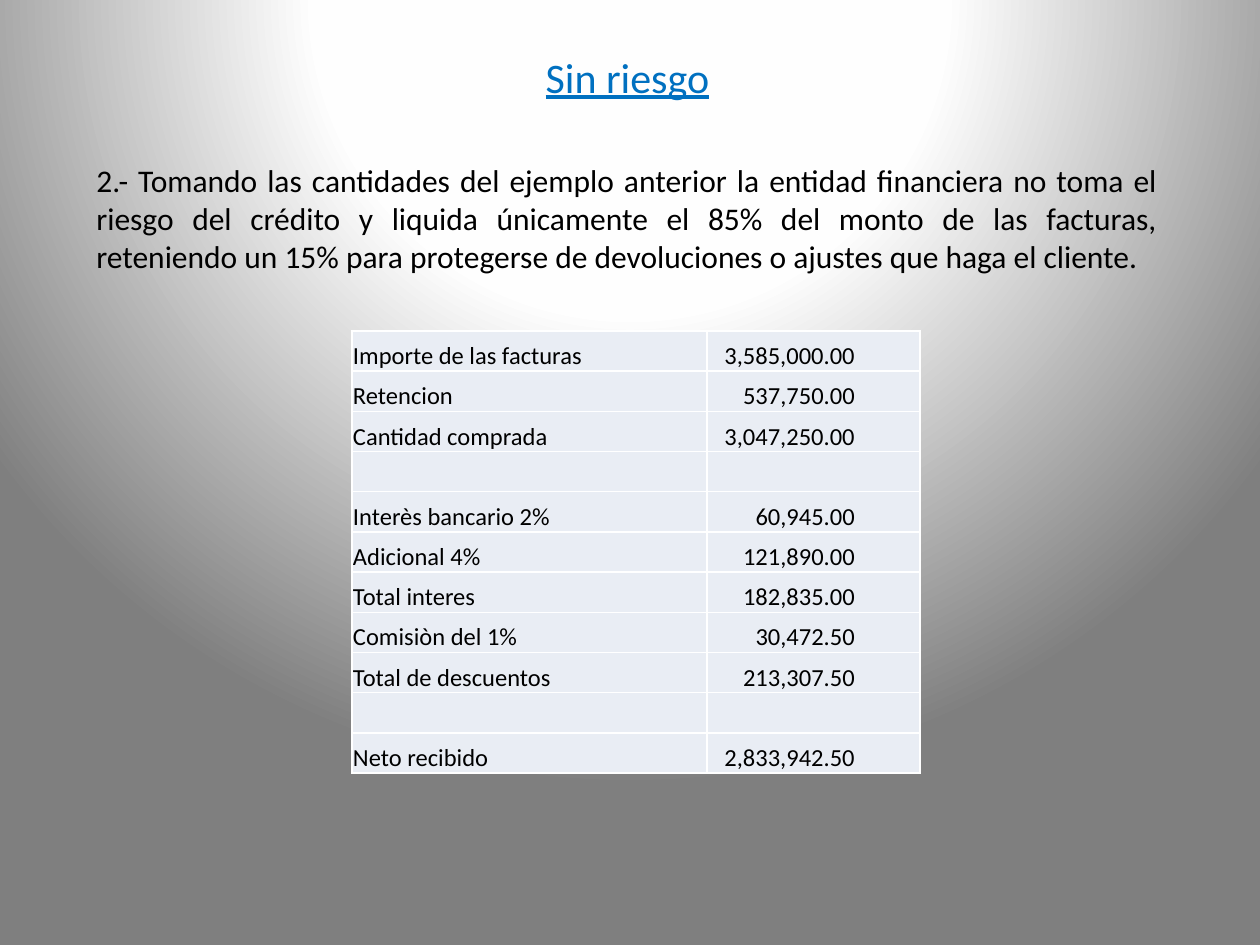
from pptx import Presentation
from pptx.dml.color import RGBColor as RGB
from pptx.enum.text import MSO_ANCHOR as Anchor, PP_ALIGN as Align
from pptx.oxml import parse_xml as to_xml
from pptx.oxml.ns import nsdecls
from pptx.util import Pt

BLACK = RGB(0x00, 0x00, 0x00)
BLUE = RGB(0x00, 0x70, 0xC0)
PALE = RGB(0xE9, 0xED, 0xF4)
WHITE = RGB(0xFF, 0xFF, 0xFF)
SNOW = RGB(0xFE, 0xFE, 0xFE)
GREY = RGB(0x7F, 0x7F, 0x7F)

TITLE = "Sin riesgo"
BODY = (
    "2.- Tomando las cantidades del ejemplo anterior la entidad financiera no toma el "
    "riesgo del crédito y liquida únicamente el 85% del monto de las facturas, "
    "reteniendo un 15% para protegerse de devoluciones o ajustes que haga el cliente."
)
ROWS = [
    ("Importe de las facturas", "3,585,000.00"),
    ("Retencion", "537,750.00"),
    ("Cantidad comprada", "3,047,250.00"),
    ("", ""),
    ("Interès bancario 2%", "60,945.00"),
    ("Adicional 4%", "121,890.00"),
    ("Total interes", "182,835.00"),
    ("Comisiòn del 1%", "30,472.50"),
    ("Total de descuentos", "213,307.50"),
    ("", ""),
    ("Neto recibido", "2,833,942.50"),
]


def px(num):
    return round(num * 914400 / 126)


class Deck:
    """Holds the style and the current slide, and draws each kind of element."""

    font = "Calibri"

    def __init__(self, wide, high):
        self.prs = Presentation()
        self.prs.slide_width, self.prs.slide_height = px(wide), px(high)
        self.slide = self.prs.slides.add_slide(self.prs.slide_layouts[6])

    def glow(self, stops):
        marks = "".join(
            f'<a:gs pos="{pos * 1000}"><a:srgbClr val="{tone}"/></a:gs>' for pos, tone in stops
        )
        back = to_xml(
            f'<p:bg {nsdecls("p", "a")}><p:bgPr><a:gradFill rotWithShape="1">'
            f'<a:gsLst>{marks}</a:gsLst><a:path path="circle">'
            '<a:fillToRect l="50000" t="-80000" r="50000" b="180000"/></a:path>'
            "</a:gradFill><a:effectLst/></p:bgPr></p:bg>"
        )
        self.slide.element.cSld.insert(0, back)

    def put(self, para, text, size, tone, align, under=None):
        para.alignment = align
        run = para.add_run()
        run.text = text
        font = run.font
        font.name, font.size, font.underline = self.font, Pt(size), under
        font.color.rgb = tone

    def text(self, box, text, size, tone, align, under=None):
        frame = self.slide.shapes.add_textbox(*map(px, box)).text_frame
        frame.word_wrap = True
        self.put(frame.paragraphs[0], text, size, tone, align, under)

    def edge(self, cell, tone):
        props = cell._tc.get_or_add_tcPr()
        for side in "LRTB":
            props.append(to_xml(
                f'<a:ln{side} {nsdecls("a")} w="{Pt(1)}"><a:solidFill>'
                f'<a:srgbClr val="{tone}"/></a:solidFill></a:ln{side}>'
            ))

    def table(self, box, cols, rows, size):
        grid = self.slide.shapes.add_table(len(rows), len(cols), *map(px, box)).table
        grid.first_row = grid.horz_banding = False
        for col, (wide, align, inset) in enumerate(cols):
            grid.columns[col].width = px(wide)
            for row, texts in enumerate(rows):
                cell = grid.cell(row, col)
                self.edge(cell, WHITE)
                cell.fill.solid()
                cell.fill.fore_color.rgb = PALE
                cell.vertical_anchor = Anchor.BOTTOM
                cell.margin_left = cell.margin_top = px(1)
                cell.margin_right, cell.margin_bottom = px(inset), 0
                if texts[col]:
                    para = cell.text_frame.paragraphs[0]
                    self.put(para, texts[col], size, BLACK, align)

    def save(self):
        self.prs.save("out.pptx")


def main():
    deck = Deck(1260, 945)
    deck.glow([(0, WHITE), (40, SNOW), (100, GREY)])
    deck.text((84, 155, 1086, 127), BODY, 18, BLACK, Align.JUSTIFY)
    deck.text((181, 45, 893, 63), TITLE, 24, BLUE, Align.CENTER, True)
    cols = [(355, Align.LEFT, 1), (213, Align.RIGHT, 65)]
    deck.table((352, 331, 568, 442), cols, ROWS, 14)
    deck.save()


if __name__ == "__main__":
    main()
